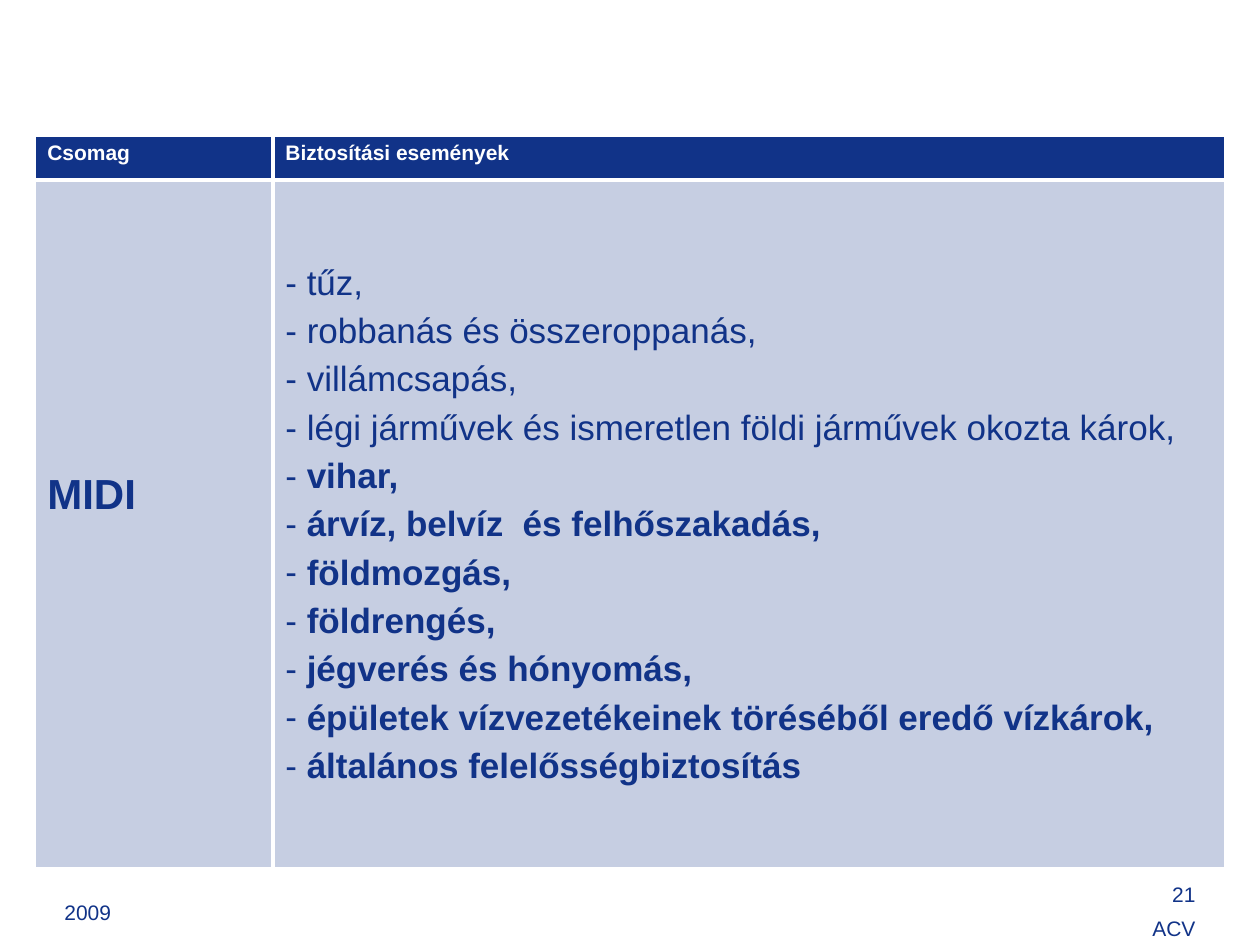
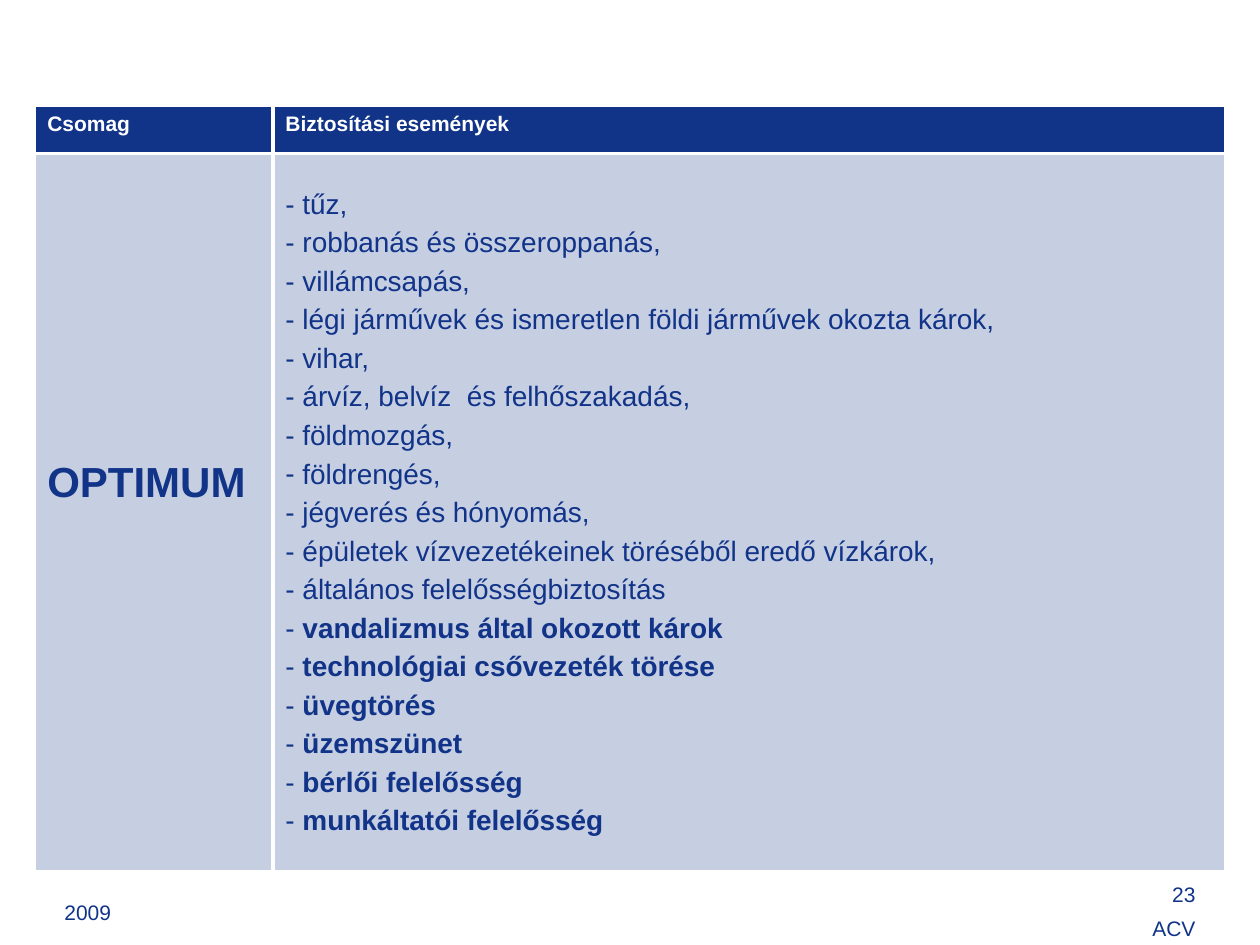
import pptx
import pptx.util
import pptx.dml.color
import pptx.enum.text
import lxml.etree
import pptx.oxml.ns

Cm = pptx.util.Cm
Pt = pptx.util.Pt
qn = pptx.oxml.ns.qn
rgb = pptx.dml.color.RGBColor.from_string
align = pptx.enum.text.PP_ALIGN
anchor = pptx.enum.text.MSO_ANCHOR

hues = {"navy": "113388", "pale": "C6CEE2", "white": "FFFFFF"}

events = [
    "tűz,",
    "robbanás és összeroppanás,",
    "villámcsapás,",
    "légi járművek és ismeretlen földi járművek okozta károk,",
    "vihar,",
    "árvíz, belvíz  és felhőszakadás,",
    "földmozgás,",
    "földrengés,",
    "jégverés és hónyomás,",
    "épületek vízvezetékeinek töréséből eredő vízkárok,",
    "általános felelősségbiztosítás",
    "vandalizmus által okozott károk",
    "technológiai csővezeték törése",
    "üvegtörés",
    "üzemszünet",
    "bérlői felelősség",
    "munkáltatói felelősség",
]

plans = [
    {"name": "MIDI", "page": "21", "top": 2.72, "rows": (0.91, 13.89),
     "size": 20, "count": 11, "plain": 4},
    {"name": "OPTIMUM", "page": "23", "top": 2.13, "rows": (0.97, 14.48),
     "size": 16, "count": 17, "plain": 11},
]


def write(frame, lines, size=12, hue="navy", plain=0, bold=False,
          dash=False, side=align.LEFT, gap=0):
    frame.word_wrap = True
    for i, line in enumerate(lines):
        para = frame.paragraphs[0] if i == 0 else frame.add_paragraph()
        para.alignment = side
        if i < len(lines) - 1:
            para.space_after = Pt(gap)
        if dash:
            props = para._p.get_or_add_pPr()
            props.set("marL", str(Pt(0.61 * size)))
            props.set("indent", str(-Pt(0.61 * size)))
            tint = lxml.etree.SubElement(props, qn("a:buClr"))
            lxml.etree.SubElement(tint, qn("a:srgbClr"), val=hues[hue])
            lxml.etree.SubElement(props, qn("a:buFont"), typeface="Arial")
            lxml.etree.SubElement(props, qn("a:buChar"), char="-")
        run = para.add_run()
        run.text = line
        run.font.name = "Arial"
        run.font.size = Pt(size)
        run.font.bold = bold and i >= plain
        run.font.color.rgb = rgb(hues[hue])


deck = pptx.Presentation()
deck.slide_width = Cm(25.4)
deck.slide_height = Cm(19.05)

for plan in plans:
    slide = deck.slides.add_slide(deck.slide_layouts[6])

    feet = [
        (1.3, 0.69, ["2009"], align.LEFT),
        (18.2, 0.25, [plan["page"], "ACV"], align.RIGHT),
    ]
    for left, inset, lines, side in feet:
        frame = slide.shapes.add_textbox(
            Cm(left), Cm(17.53), Cm(5.9), Cm(1.52)).text_frame
        frame.margin_left = frame.margin_right = frame.margin_bottom = 0
        frame.margin_top = Cm(inset)
        write(frame, lines, side=side, gap=4.5)

    grid = slide.shapes.add_table(
        2, 2, Cm(0.7), Cm(plan["top"]), Cm(24), Cm(sum(plan["rows"]))).table
    grid.horz_banding = False
    for col, width in zip(grid.columns, (4.8, 19.2)):
        col.width = Cm(width)
    for row, height in zip(grid.rows, plan["rows"]):
        row.height = Cm(height)

    for cell in grid.iter_cells():
        props = cell._tc.get_or_add_tcPr()
        for edge in ("lnL", "lnR", "lnT", "lnB"):
            line = lxml.etree.SubElement(
                props, qn("a:" + edge), w=str(Pt(2.25)))
            fill = lxml.etree.SubElement(line, qn("a:solidFill"))
            lxml.etree.SubElement(fill, qn("a:srgbClr"), val=hues["white"])
        cell.fill.solid()

    for i, title in enumerate(("Csomag", "Biztosítási események")):
        head, body = grid.cell(0, i), grid.cell(1, i)
        head.fill.fore_color.rgb = rgb(hues["navy"])
        body.fill.fore_color.rgb = rgb(hues["pale"])
        body.vertical_anchor = anchor.MIDDLE
        write(head.text_frame, [title], hue="white", bold=True)

    label, risks = grid.cell(1, 0), grid.cell(1, 1)
    label.margin_bottom = Cm(1.33)
    write(label.text_frame, [plan["name"]], size=24, bold=True)
    write(risks.text_frame, events[:plan["count"]], size=plan["size"],
          plain=plan["plain"], bold=True, dash=True,
          gap=0.265 * plan["size"])

deck.save("out.pptx")
